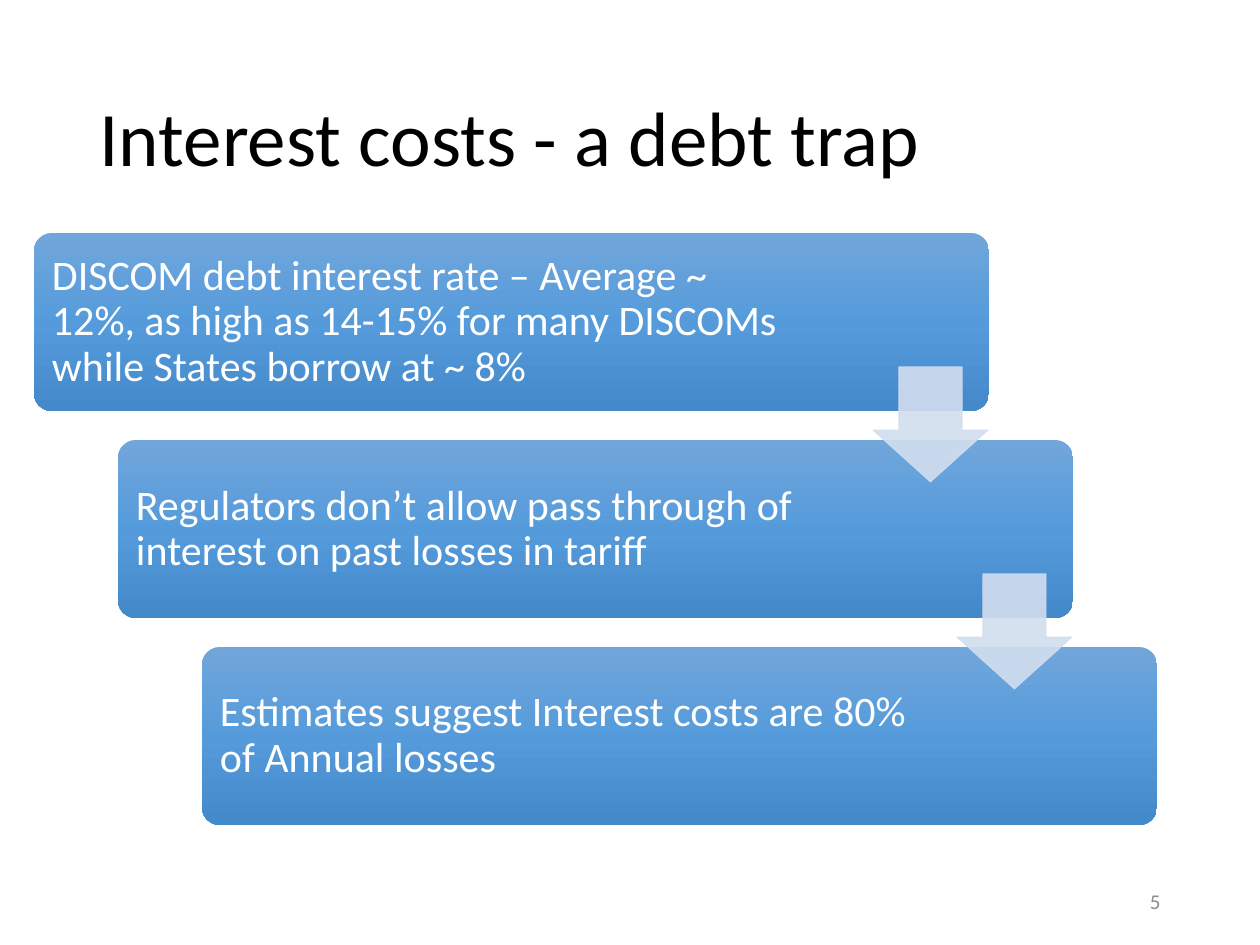
from copy import deepcopy
from lxml import etree
from pptx import Presentation, util as u
from pptx.dml.color import RGBColor
from pptx.enum import shapes, text
from pptx.oxml.ns import qn

TITLE = "Interest costs - a debt trap"
STEPS = [
    ("DISCOM debt interest rate – Average ~ 12%, as high as 14-15% "
     "for many DISCOMs while States borrow at ~ 8%", 764),
    ("Regulators don’t allow pass through of interest on past losses in tariff", 745),
    ("Estimates suggest Interest costs are 80% of Annual losses", 745),
]
PAGE = "5"
HEX = {"ink": "000000", "text": "FFFFFF", "page": "8C8C8C", "arrow": "D2DEEF"}
GRAD = [(0, "71A6DB"), (0.5, "559BDB"), (1, "448ACA")]
LEFT, TOP, WIDE, HIGH = 34, 233, 955, 178
DX, DY, PAD = 84, 207, 5
ARROW = (873, 367, 115)


def px(n):
    return round(n * 914400 / 126)


def rgb(name):
    return RGBColor.from_string(HEX.get(name, name))


def place(shape, *box):
    shape.left, shape.top, shape.width, shape.height = map(px, box)


def write(shape, words, size, color, align=text.PP_ALIGN.LEFT, space=0.9, inset=None):
    frame = shape.text_frame
    frame.word_wrap = True
    frame.auto_size = text.MSO_AUTO_SIZE.NONE
    frame.vertical_anchor = text.MSO_ANCHOR.MIDDLE
    if inset is not None:
        frame.margin_left = frame.margin_right = px(inset)
        frame.margin_top = frame.margin_bottom = px(inset)
    para = frame.paragraphs[0]
    para.alignment, para.line_spacing = align, space
    run = para.add_run()
    run.text = words
    run.font.name, run.font.size = "Calibri", u.Pt(size)
    run.font.color.rgb = rgb(color)


def draw(slide, kind, adjust, *box):
    shape = slide.shapes.add_shape(kind, *map(px, box))
    shape.shadow.inherit = False
    for i, value in enumerate(adjust):
        shape.adjustments[i] = value
    return shape


def shade(shape):
    fill = shape.fill
    fill.gradient()
    fill.gradient_angle = 270
    stops = shape.element.spPr.find(qn("a:gradFill")).find(qn("a:gsLst"))
    stops.append(deepcopy(stops[0]))
    for stop, (pos, color) in zip(fill.gradient_stops, GRAD):
        stop.position = pos
        stop.color.rgb = rgb(color)
    shape.line.fill.background()


def fade(shape, color, alpha):
    shape.fill.solid()
    shape.fill.fore_color.rgb = rgb(color)
    shape.line.color.rgb = rgb(color)
    shape.line.width = u.Pt(0.5)
    for node in shape.element.spPr.iter(qn("a:srgbClr")):
        etree.SubElement(node, qn("a:alpha"), val=str(alpha * 1000))


def main():
    deck = Presentation()
    deck.slide_width, deck.slide_height = px(1260), px(945)
    slide = deck.slides.add_slide(deck.slide_layouts[5])
    title = slide.shapes.title
    place(title, 87, 50, 1086, 183)
    write(title, TITLE, 44, "ink")

    for i, (words, wide) in enumerate(STEPS):
        x, y = LEFT + i * DX, TOP + i * DY
        shade(draw(slide, shapes.MSO_SHAPE.ROUNDED_RECTANGLE, [0.1], x, y, WIDE, HIGH))
        label = slide.shapes.add_textbox(
            *map(px, (x + PAD, y + PAD, wide, HIGH - 2 * PAD)))
        write(label, words, 24, "text", inset=13)

    x, y, size = ARROW
    for i in range(len(STEPS) - 1):
        arrow = draw(slide, shapes.MSO_SHAPE.DOWN_ARROW, [0.55, 0.45],
                     x + i * DX, y + i * DY, size, size)
        fade(arrow, "arrow", 90)

    page = slide.shapes.add_textbox(*map(px, (890, 876, 283, 50)))
    write(page, PAGE, 12, "page", align=text.PP_ALIGN.RIGHT, space=1.0)
    deck.save("out.pptx")


if __name__ == "__main__":
    main()
